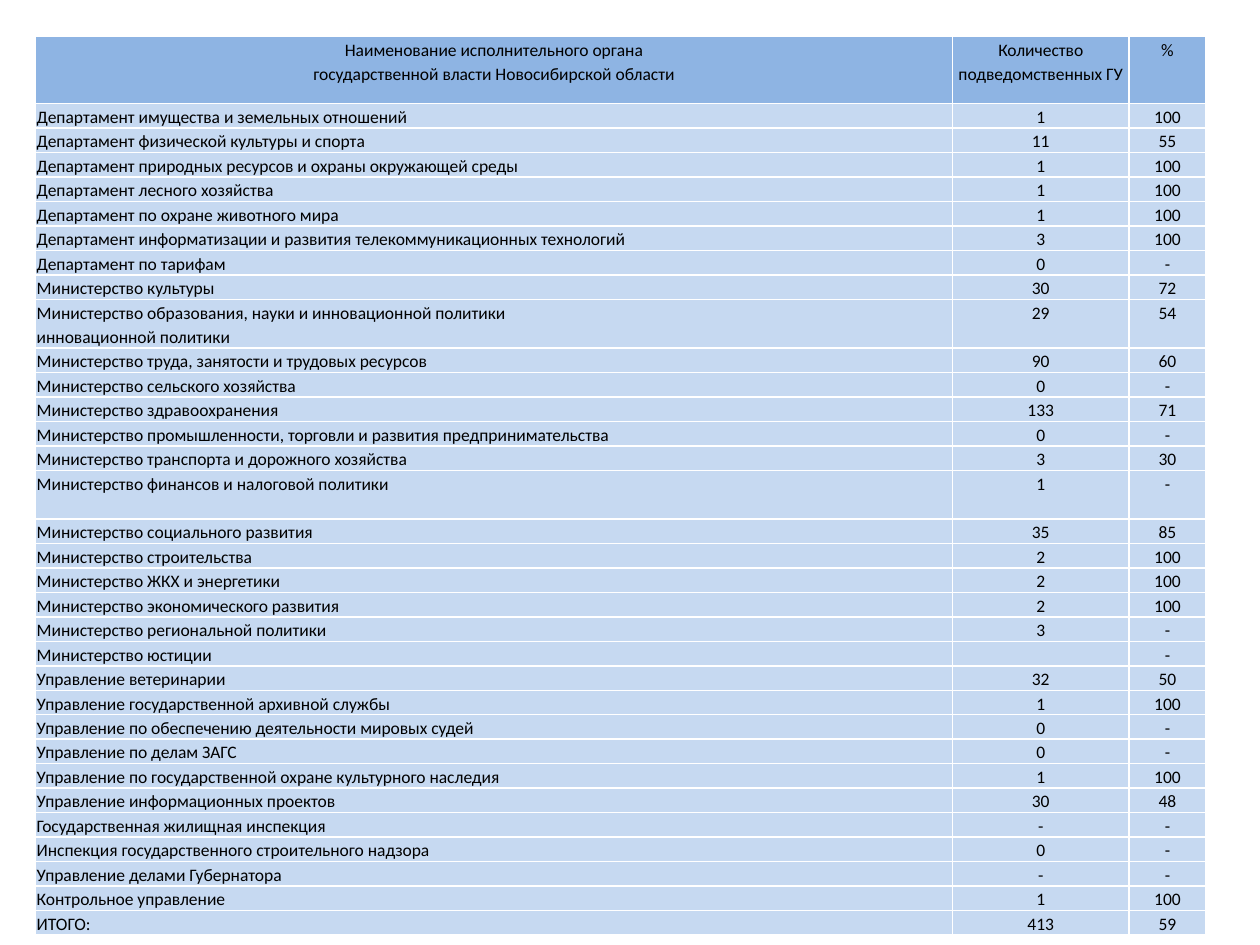
from lxml import etree
from pptx import Presentation
from pptx.dml.color import RGBColor
from pptx.enum.text import PP_ALIGN
from pptx.oxml.ns import qn
from pptx.util import Cm, Pt

LEFT, CENTER = PP_ALIGN.LEFT, PP_ALIGN.CENTER
BLACK = RGBColor(0x00, 0x00, 0x00)
WHITE = RGBColor(0xFF, 0xFF, 0xFF)
HEADER_BLUE = RGBColor(0x8E, 0xB4, 0xE3)
BODY_BLUE = RGBColor(0xC6, 0xD9, 0xF1)
COLUMN_WIDTHS = [18.49, 3.56, 1.55]
HEADER_HEIGHT, LINE_HEIGHT = 1.35, 0.49

ROWS = [
    ("Наименование исполнительного органа\nгосударственной власти Новосибирской области",
     "Количество подведомственных ГУ", "%"),
    ("Департамент имущества и земельных отношений", "1", "100"),
    ("Департамент физической культуры и спорта", "11", "55"),
    ("Департамент природных ресурсов и охраны окружающей среды", "1", "100"),
    ("Департамент лесного хозяйства", "1", "100"),
    ("Департамент по охране животного мира", "1", "100"),
    ("Департамент информатизации и развития телекоммуникационных технологий", "3", "100"),
    ("Департамент по тарифам", "0", "-"),
    ("Министерство культуры", "30", "72"),
    ("Министерство образования, науки и инновационной политики\nинновационной политики",
     "29", "54"),
    ("Министерство труда, занятости и трудовых ресурсов", "90", "60"),
    ("Министерство сельского хозяйства", "0", "-"),
    ("Министерство здравоохранения", "133", "71"),
    ("Министерство промышленности, торговли и развития предпринимательства", "0", "-"),
    ("Министерство транспорта и дорожного хозяйства", "3", "30"),
    ("Министерство финансов и налоговой политики", "1", "-"),
    ("Министерство социального развития", "35", "85"),
    ("Министерство строительства", "2", "100"),
    ("Министерство ЖКХ и энергетики", "2", "100"),
    ("Министерство экономического развития", "2", "100"),
    ("Министерство региональной политики", "3", "-"),
    ("Министерство юстиции", "", "-"),
    ("Управление ветеринарии", "32", "50"),
    ("Управление государственной архивной службы", "1", "100"),
    ("Управление по обеспечению деятельности мировых судей", "0", "-"),
    ("Управление по делам ЗАГС", "0", "-"),
    ("Управление по государственной охране культурного наследия", "1", "100"),
    ("Управление информационных проектов", "30", "48"),
    ("Государственная жилищная инспекция", "-", "-"),
    ("Инспекция государственного строительного надзора", "0", "-"),
    ("Управление делами Губернатора", "-", "-"),
    ("Контрольное управление", "1", "100"),
    ("ИТОГО:", "413", "59"),
]
DOUBLE_ROWS = {
    number for number, row in enumerate(ROWS)
    if "\n" in row[0] or row[0].startswith("Министерство финансов")
}


def add_borders(cell):
    properties = cell._tc.get_or_add_tcPr()
    for side in ("a:lnL", "a:lnR", "a:lnT", "a:lnB"):
        line = etree.SubElement(properties, qn(side), w=str(Pt(1)))
        fill = etree.SubElement(line, qn("a:solidFill"))
        etree.SubElement(fill, qn("a:srgbClr"), val=str(WHITE))


deck = Presentation()
deck.slide_width, deck.slide_height = Cm(25.4), Cm(19.05)
page = deck.slides.add_slide(deck.slide_layouts[6])

heights = [LINE_HEIGHT * (2 if number in DOUBLE_ROWS else 1) for number in range(len(ROWS))]
heights[0] = HEADER_HEIGHT
frame = page.shapes.add_table(len(ROWS), len(COLUMN_WIDTHS), Cm(0.71), Cm(0.74),
                              Cm(sum(COLUMN_WIDTHS)), Cm(sum(heights)))
table = frame.table
table.first_row = False
table.horz_banding = False
for column, width in zip(table.columns, COLUMN_WIDTHS):
    column.width = Cm(width)

for row_number, (row, values) in enumerate(zip(table.rows, ROWS)):
    row.height = Cm(heights[row_number])
    for column_number, (cell, value) in enumerate(zip(row.cells, values)):
        cell.margin_left = cell.margin_right = Cm(0.03)
        cell.margin_top = cell.margin_bottom = 0
        add_borders(cell)
        cell.fill.solid()
        cell.fill.fore_color.rgb = HEADER_BLUE if row_number == 0 else BODY_BLUE
        cell.text_frame.text = value
        for para in cell.text_frame.paragraphs:
            para.alignment = LEFT if row_number and column_number == 0 else CENTER
            para.line_spacing = 1.15
            for span in para.runs:
                span.font.name = "Calibri"
                span.font.size = Pt(10)
                span.font.color.rgb = BLACK
            if not value:
                etree.SubElement(para._p, qn("a:endParaRPr"), sz="1000")

deck.save("out.pptx")
